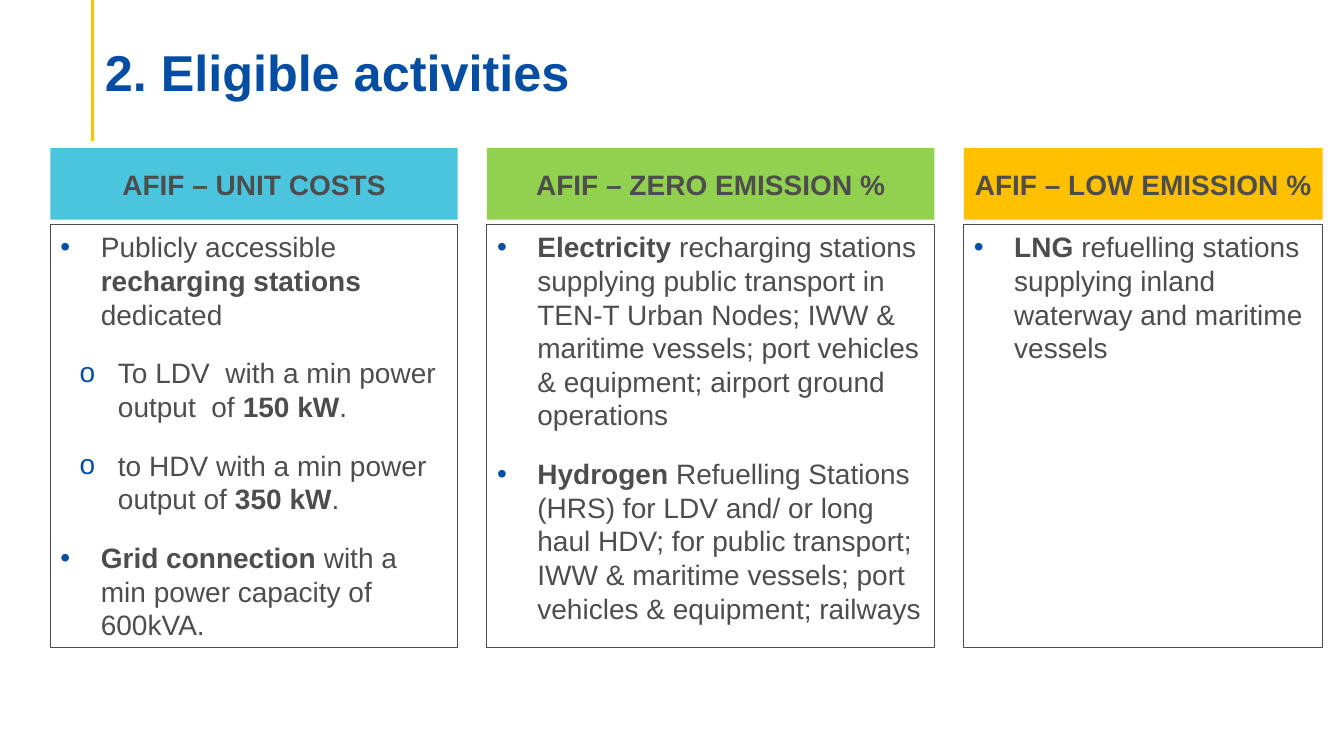
from dataclasses import dataclass

from lxml.etree import SubElement
from pptx import Presentation
from pptx.dml.color import RGBColor
from pptx.enum.shapes import MSO_CONNECTOR, MSO_SHAPE
from pptx.enum.text import MSO_ANCHOR, MSO_AUTO_SIZE, PP_ALIGN
from pptx.oxml.ns import qn
from pptx.util import Inches, Pt

WIDTH, HEIGHT = Inches(13.33), Inches(7.5)


@dataclass(frozen=True)
class Theme:
    font: str = "Arial"
    blue: str = "034EA2"
    text: str = "4D4D4D"
    cyan: str = "4BC5DE"
    green: str = "92D050"
    amber: str = "FFC000"
    title_size: int = 36
    body_size: int = 20
    leading: int = 24


@dataclass(frozen=True)
class Box:
    left: float
    top: float
    width: float
    height: float


@dataclass(frozen=True)
class Span:
    text: str
    bold: bool = False


@dataclass(frozen=True)
class Item:
    spans: tuple[Span, ...]
    level: int = 0


@dataclass(frozen=True)
class Column:
    heading: str
    color: str
    width: float
    holder: int
    items: tuple[Item, ...]


@dataclass(frozen=True)
class Bullet:
    char: str
    margin: float
    hanging: float


THEME = Theme()
BULLETS = (Bullet("•", 0.4, 0.4), Bullet("o", 0.57, 0.38))
LEFT, GAP = 3.75, 2.18
HEAD_TOP, HEAD_HEIGHT = 19.6, 9.47
BODY_TOP, BODY_HEIGHT = 29.73, 55.87

COLUMNS = (
    Column("AFIF – UNIT COSTS", THEME.cyan, 30.3, 1, (
        Item((Span("Publicly accessible "), Span("recharging stations ", True),
              Span("dedicated"))),
        Item((Span("To LDV  with a min power output  of "),
              Span("150 kW", True), Span(".")), 1),
        Item((Span("to HDV with a min power output of "),
              Span("350 kW", True), Span(".")), 1),
        Item((Span("Grid connection ", True),
              Span("with a min power capacity of 600kVA."))),
    )),
    Column("AFIF – ZERO EMISSION %", THEME.green, 33.3, 2, (
        Item((Span("Electricity", True),
              Span(" recharging stations supplying public transport in TEN-T "
                   "Urban Nodes; IWW & maritime vessels; port vehicles & "
                   "equipment; airport ground operations"))),
        Item((Span("Hydrogen", True),
              Span(" Refuelling Stations (HRS) for LDV and/ or long haul HDV; "
                   "for public transport; IWW & maritime vessels; port "
                   "vehicles & equipment; railways"))),
    )),
    Column("AFIF – LOW EMISSION %", THEME.amber, 26.7, 3, (
        Item((Span("LNG ", True),
              Span("refuelling stations supplying inland waterway and "
                   "maritime vessels"))),
    )),
)


def across(share: float) -> int:
    return round(WIDTH * share / 100)


def down(share: float) -> int:
    return round(HEIGHT * share / 100)


def place(shape, box: Box) -> None:
    shape.left, shape.top = across(box.left), down(box.top)
    shape.width, shape.height = across(box.width), down(box.height)


def prepare(tf, anchor: MSO_ANCHOR) -> None:
    tf.word_wrap = True
    tf.auto_size = MSO_AUTO_SIZE.NONE
    tf.vertical_anchor = anchor
    tf.margin_left = tf.margin_right = Inches(0.1)
    tf.margin_top = tf.margin_bottom = Inches(0.05)


def add_run(p, span: Span, size: int, color: str) -> None:
    r = p.add_run()
    r.text = span.text
    r.font.name = THEME.font
    r.font.size = Pt(size)
    r.font.bold = span.bold
    r.font.color.rgb = RGBColor.from_string(color)


def add_bullet(p, bullet: Bullet) -> None:
    pPr = p._p.get_or_add_pPr()
    pPr.set("marL", str(Inches(bullet.margin)))
    pPr.set("indent", str(-Inches(bullet.hanging)))
    color = SubElement(pPr, qn("a:buClr"))
    SubElement(color, qn("a:srgbClr"), val=THEME.blue)
    SubElement(pPr, qn("a:buFont"), typeface=THEME.font)
    SubElement(pPr, qn("a:buChar"), char=bullet.char)


def draw_title(s, text: str) -> None:
    sp = s.shapes.title
    place(sp, Box(7.05, 3.87, 86.27, 11.47))
    tf = sp.text_frame
    prepare(tf, MSO_ANCHOR.MIDDLE)
    tf.margin_bottom = 0
    p = tf.paragraphs[0]
    p.alignment = PP_ALIGN.LEFT
    p.line_spacing = 0.9
    add_run(p, Span(text, True), THEME.title_size, THEME.blue)


def draw_rule(s) -> None:
    x = across(6.9)
    line = s.shapes.add_connector(MSO_CONNECTOR.STRAIGHT, x, 0, x, down(18.67))
    line.line.color.rgb = RGBColor.from_string(THEME.amber)
    line.line.width = Pt(2.25)
    SubElement(line._element.spPr, qn("a:effectLst"))


def draw_heading(s, column: Column, left: float) -> None:
    sp = s.shapes.add_shape(MSO_SHAPE.RECTANGLE, 0, 0, 0, 0)
    place(sp, Box(left, HEAD_TOP, column.width, HEAD_HEIGHT))
    sp.shadow.inherit = False
    sp.fill.solid()
    sp.fill.fore_color.rgb = RGBColor.from_string(column.color)
    sp.line.fill.background()
    prepare(sp.text_frame, MSO_ANCHOR.MIDDLE)
    p = sp.text_frame.paragraphs[0]
    p.alignment = PP_ALIGN.CENTER
    add_run(p, Span(column.heading, True), THEME.body_size, THEME.text)


def draw_body(s, column: Column, left: float) -> None:
    sp = s.placeholders[column.holder]
    place(sp, Box(left, BODY_TOP, column.width, BODY_HEIGHT))
    sp.line.color.rgb = RGBColor.from_string(THEME.text)
    sp.line.width = Pt(0.75)
    tf = sp.text_frame
    prepare(tf, MSO_ANCHOR.TOP)
    for i, item in enumerate(column.items):
        p = tf.add_paragraph() if i else tf.paragraphs[0]
        p.level = item.level
        add_bullet(p, BULLETS[item.level])
        p.line_spacing = Pt(THEME.leading)
        p.space_before = Pt(12 if i else 0)
        p.space_after = Pt(6)
        for span in item.spans:
            add_run(p, span, THEME.body_size, THEME.text)


def main() -> None:
    prs = Presentation()
    prs.slide_width, prs.slide_height = WIDTH, HEIGHT
    s = prs.slides.add_slide(prs.slide_layouts.get_by_name("Comparison"))
    draw_rule(s)
    draw_title(s, "2. Eligible activities")
    left = LEFT
    for column in COLUMNS:
        draw_heading(s, column, left)
        draw_body(s, column, left)
        left += column.width + GAP
    for sp in list(s.placeholders):
        if not sp.text_frame.text:
            sp._element.getparent().remove(sp._element)
    prs.save("out.pptx")


if __name__ == "__main__":
    main()
